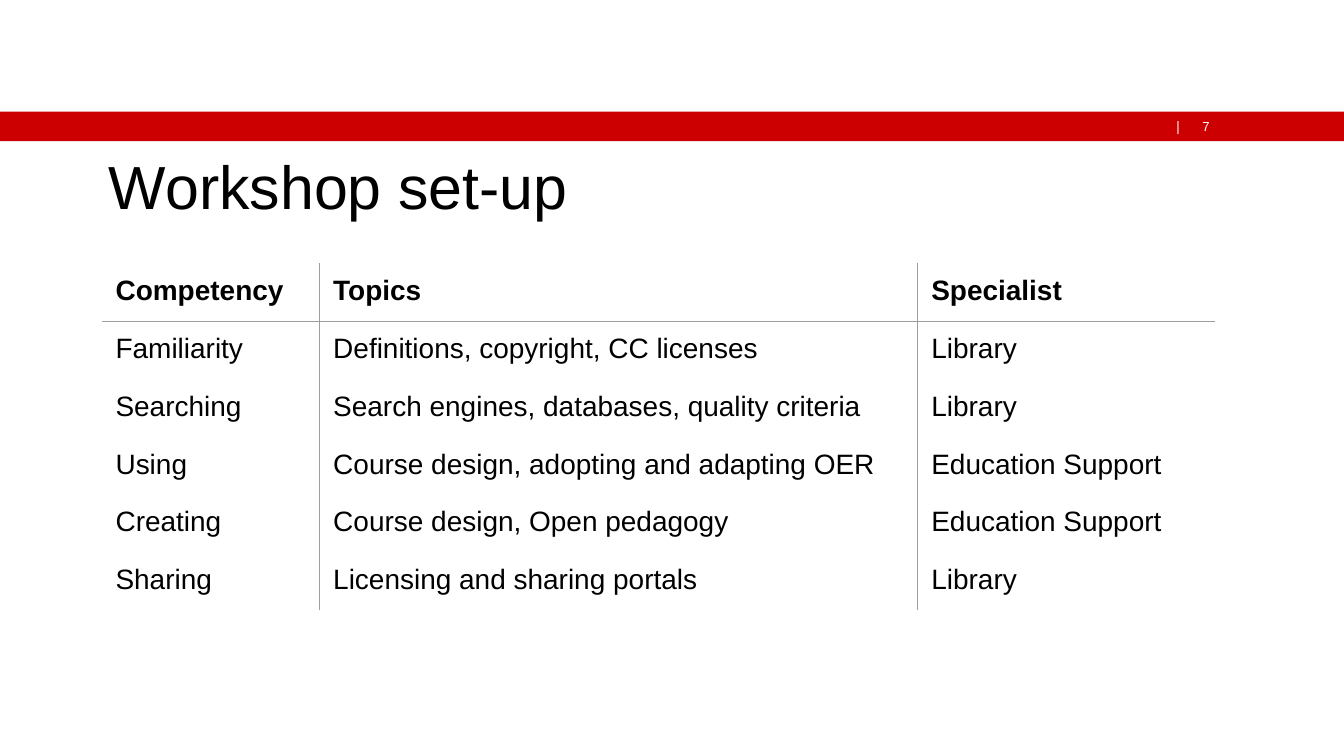
from lxml.etree import SubElement
from pptx import Presentation
from pptx.dml.color import RGBColor
from pptx.enum.shapes import MSO_SHAPE
from pptx.enum.text import MSO_ANCHOR, PP_ALIGN
from pptx.oxml.ns import qn
from pptx.util import Inches, Pt

TITLE = "Workshop set-up"
ROWS = [
    ("Competency", "Topics", "Specialist"),
    ("Familiarity", "Definitions, copyright, CC licenses", "Library"),
    ("Searching", "Search engines, databases, quality criteria", "Library"),
    ("Using", "Course design, adopting and adapting OER", "Education Support"),
    ("Creating", "Course design, Open pedagogy", "Education Support"),
    ("Sharing", "Licensing and sharing portals", "Library"),
]
COLUMN_WIDTHS = [1.62, 4.45, 2.21]
ROW_HEIGHT = 0.42
PAGE_MARKS = [
    ("|", 8.75, 0.04, "DejaVu Sans", PP_ALIGN.LEFT),
    ("7", 8.79, 0.21, "Arial", PP_ALIGN.RIGHT),
]
RED, WHITE, BLACK, GREY = "CC0000", "FFFFFF", "000000", "9E9E9E"


def color(value):
    return RGBColor.from_string(value)


def write(frame, text, size, font="Arial", fill=BLACK, bold=False,
          align=PP_ALIGN.LEFT, anchor=MSO_ANCHOR.TOP, insets=(0, 0, 0, 0), wrap=True):
    frame.word_wrap = wrap
    frame.vertical_anchor = anchor
    frame.margin_left, frame.margin_top, frame.margin_right, frame.margin_bottom = map(Inches, insets)
    write_paragraph(frame.paragraphs[0], text, size, font, fill, bold, align)


def write_paragraph(paragraph, text, size, font="Arial", fill=BLACK, bold=False, align=PP_ALIGN.LEFT):
    paragraph.alignment = align
    run = paragraph.add_run()
    run.text = text
    run.font.name, run.font.size, run.font.bold = font, Pt(size), bold
    run.font.color.rgb = color(fill)


def set_borders(cell, visible):
    properties = cell._tc.get_or_add_tcPr()
    for side in "LRTB":
        line = SubElement(properties, qn(f"a:ln{side}"), w=str(Pt(0.75)))
        if side in visible:
            solid = SubElement(line, qn("a:solidFill"))
            SubElement(solid, qn("a:srgbClr"), val=GREY)
        else:
            SubElement(line, qn("a:noFill"))


def add_header(slide):
    bar = slide.shapes.add_shape(MSO_SHAPE.RECTANGLE, 0, Inches(0.83), Inches(10), Inches(0.22))
    bar.shadow.inherit = False
    bar.fill.solid()
    bar.fill.fore_color.rgb = color(RED)
    bar.line.fill.background()
    for text, left, width, font, align in PAGE_MARKS:
        box = slide.shapes.add_textbox(Inches(left), Inches(0.88), Inches(width), Inches(0.11))
        write(box.text_frame, text, 7, font=font, fill=WHITE, align=align, wrap=False)


def add_title(slide):
    title = slide.shapes.title
    title.left, title.top, title.width, title.height = map(Inches, (0, 1.05, 10, 0.65))
    write(title.text_frame, TITLE, 32.6, anchor=MSO_ANCHOR.MIDDLE, insets=(0.81, 0.04, 0.22, 0.04))


def add_workshop_table(slide):
    last_column = len(COLUMN_WIDTHS) - 1
    frame = slide.shapes.add_table(
        len(ROWS), len(COLUMN_WIDTHS), Inches(0.76), Inches(1.96),
        Inches(sum(COLUMN_WIDTHS)), Inches(ROW_HEIGHT * len(ROWS)))
    table = frame.table
    table.horz_banding = False
    for column, width in zip(table.columns, COLUMN_WIDTHS):
        column.width = Inches(width)
    for row_index, texts in enumerate(ROWS):
        table.rows[row_index].height = Inches(ROW_HEIGHT)
        for column_index, text in enumerate(texts):
            cell = table.cell(row_index, column_index)
            cell.margin_left = cell.margin_right = Inches(0.1)
            cell.margin_top = cell.margin_bottom = Inches(0.09)
            visible = ("L" if column_index > 0 else "") + ("R" if column_index < last_column else "")
            visible += {0: "B", 1: "T"}.get(row_index, "")
            set_borders(cell, visible)
            cell.fill.background()
            write_paragraph(cell.text_frame.paragraphs[0], text, 15, bold=row_index == 0)


def main():
    presentation = Presentation()
    presentation.slide_width = Inches(10)
    presentation.slide_height = presentation.slide_width * 9 // 16
    slide = presentation.slides.add_slide(presentation.slide_layouts[5])
    add_header(slide)
    add_title(slide)
    add_workshop_table(slide)
    presentation.save("out.pptx")


if __name__ == "__main__":
    main()
